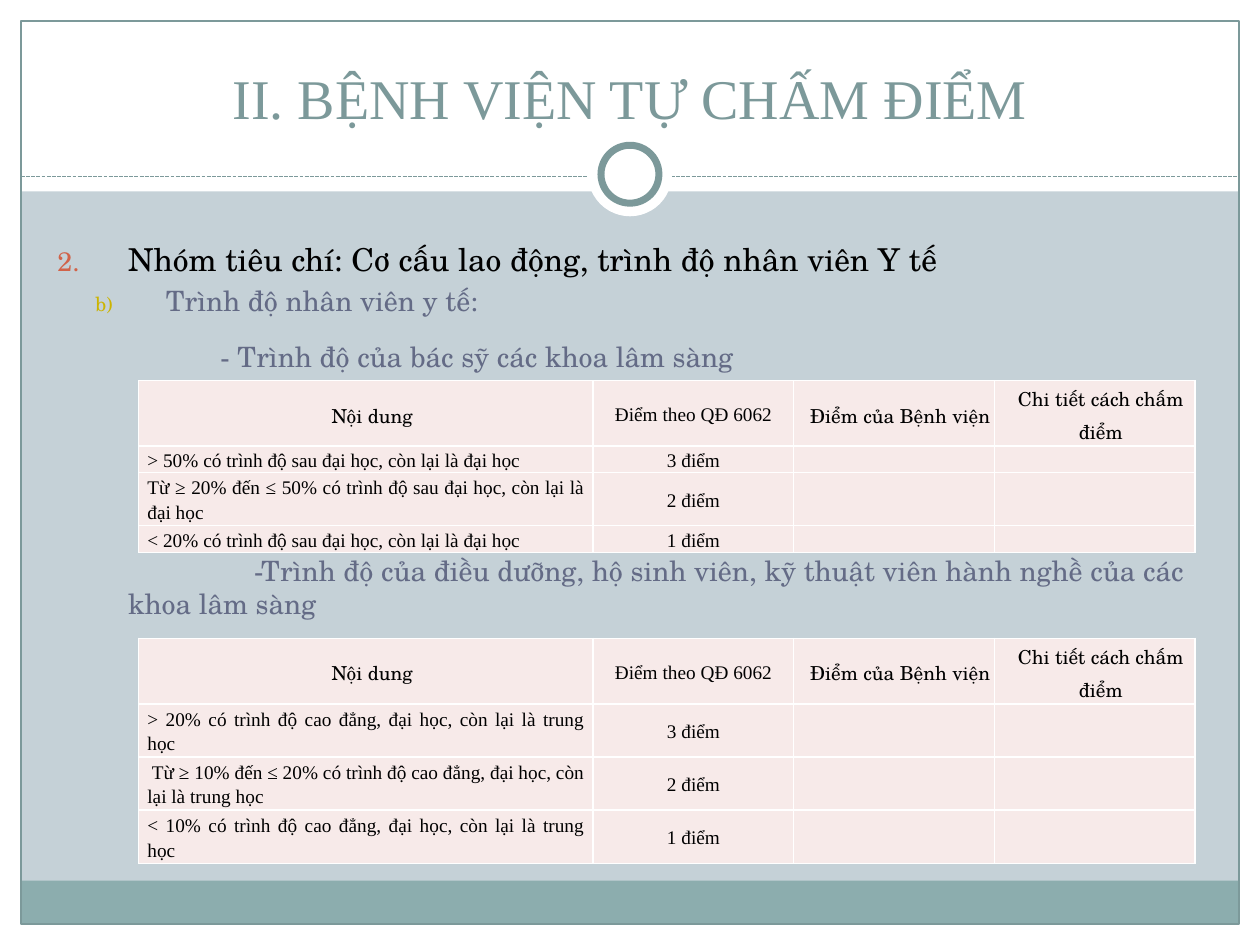
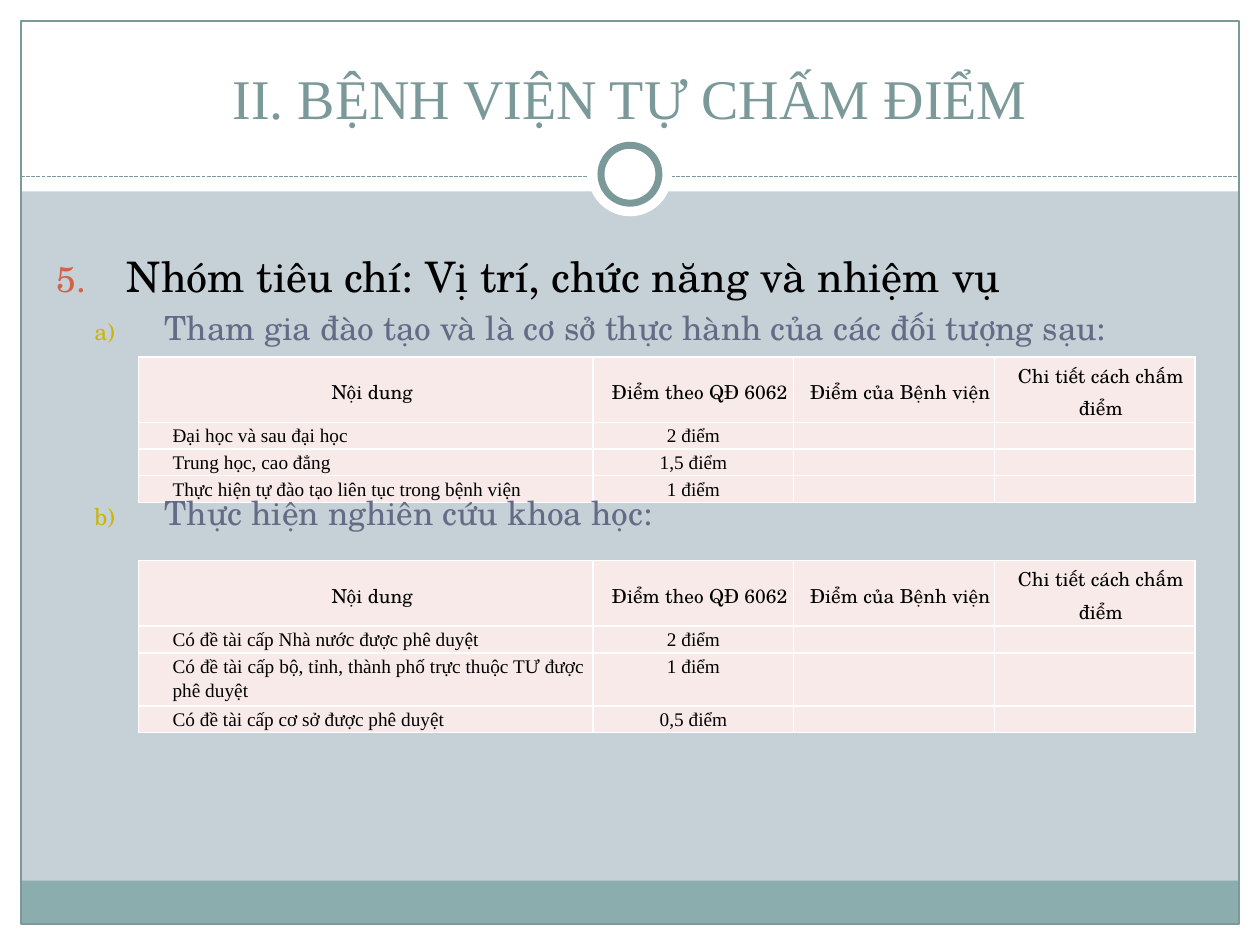
from lxml import etree
from pptx import Presentation
from pptx import util as u
from pptx.dml.color import RGBColor
from pptx.enum import dml, shapes, text
from pptx.oxml import ns

WHITE = RGBColor(0xFF, 0xFF, 0xFF)
BLACK = RGBColor(0x00, 0x00, 0x00)
BACKDROP = RGBColor(0xC5, 0xD1, 0xD7)
BAND = RGBColor(0x8C, 0xAD, 0xAE)
TEAL = RGBColor(0x7C, 0x99, 0x9A)
SLATE = RGBColor(0x64, 0x6B, 0x86)
RED = RGBColor(0xD1, 0x63, 0x49)
GOLD = RGBColor(0xCC, 0xB4, 0x00)
CELL = RGBColor(0xF7, 0xEA, 0xE9)

SERIF = "Times New Roman"
SCHOLA = "TeX Gyre Schola"
PP, SHAPE = text.PP_ALIGN, shapes.MSO_SHAPE
MIDDLE, TOP = text.MSO_ANCHOR.MIDDLE, text.MSO_ANCHOR.TOP

COLS, ROWS = 60, 45
TABLE_LEFT = 6.6
COLUMN_WIDTHS = [21.65] + [9.55] * 3
HEADER_HEIGHT, LINE_HEIGHT = 3.12, 1.14
HEADERS = ["Nội dung", "Điểm theo QĐ 6062", "Điểm của Bệnh viện",
           "Chi tiết cách chấm điểm"]


def add_child(parent, tag, **attributes):
    return etree.SubElement(parent, ns.qn(tag), attributes)


class Deck:
    """Draws on the current slide, in columns and rows of a 60 x 45 grid."""

    def __init__(self):
        self.prs = Presentation()
        self.prs.slide_width, self.prs.slide_height = u.Inches(10), u.Inches(7.5)
        self.s = None

    def x(self, cols):
        return round(self.prs.slide_width * cols / COLS)

    def y(self, rows):
        return round(self.prs.slide_height * rows / ROWS)

    def box(self, left, top, width, height):
        return self.x(left), self.y(top), self.x(width), self.y(height)

    def shape(self, kind, place, fill=None, line=None, weight=0.75):
        sp = self.s.shapes.add_shape(kind, *self.box(*place))
        sp.shadow.inherit = False
        if fill is None:
            sp.fill.background()
        else:
            sp.fill.solid()
            sp.fill.fore_color.rgb = fill
        if line is None:
            sp.line.fill.background()
        else:
            sp.line.color.rgb = line
            sp.line.width = u.Pt(weight)

    def dashed_line(self, left, right, row):
        line = self.s.shapes.add_connector(
            shapes.MSO_CONNECTOR.STRAIGHT,
            self.x(left), self.y(row), self.x(right), self.y(row))
        line.line.color.rgb = TEAL
        line.line.width = u.Pt(0.75)
        line.line.dash_style = dml.MSO_LINE.SQUARE_DOT
        add_child(line.element.spPr, "a:effectLst")

    def slide(self, title):
        """Starts a slide with the shared frame, bands, ring and title."""
        self.s = self.prs.slides.add_slide(self.prs.slide_layouts[6])
        self.s.background.fill.solid()
        self.s.background.fill.fore_color.rgb = BACKDROP
        for edge in [(0, 44, 60, 1), (0, 0, 60, 9.12), (0, 0, 1, 45), (59, 0, 1, 45)]:
            self.shape(SHAPE.RECTANGLE, edge, WHITE)
        self.shape(SHAPE.RECTANGLE, (1, 41.94, 58, 2.06), BAND)
        self.shape(SHAPE.RECTANGLE, (1, 1, 58, 43), line=TEAL)
        self.dashed_line(1, 59, 8.4)
        self.shape(SHAPE.OVAL, (28, 6.3, 4, 4), WHITE)
        self.shape(SHAPE.OVAL, (28.62, 6.92, 2.76, 2.76), WHITE, TEAL, 4)
        tf = self.text_frame(2, 1.5, 56, 5)
        tf.vertical_anchor = text.MSO_ANCHOR.BOTTOM
        p = self.paragraph(tf, title, 32, TEAL, SERIF)
        p.alignment = PP.CENTER

    def text_frame(self, *place):
        tf = self.s.shapes.add_textbox(*self.box(*place)).text_frame
        tf.word_wrap = True
        return tf

    def paragraph(self, tf, words, size, color=BLACK, font=SCHOLA, margin=0, indent=0):
        """Fills the empty first paragraph, or adds one after it."""
        p = tf.paragraphs[0] if not tf.text else tf.add_paragraph()
        p.text = words
        p.font.size, p.font.name, p.font.color.rgb = u.Pt(size), font, color
        pPr = p._p.get_or_add_pPr()
        pPr.set("marL", str(self.x(margin)))
        pPr.set("indent", str(self.x(indent)))
        return p

    def outline(self, tf, words, size, color=SLATE, margin=5.16, indent=0):
        p = self.paragraph(tf, words, size, color, margin=margin, indent=indent)
        p.space_before = u.Pt(size * 0.2)
        return p

    def number(self, p, scheme, start, color, percent):
        pPr = p._p.get_or_add_pPr()
        mark = etree.Element(ns.qn("a:buClr"))
        add_child(mark, "a:srgbClr", val=str(color))
        size = etree.Element(ns.qn("a:buSzPct"), val=str(percent * 1000))
        auto = etree.Element(ns.qn("a:buAutoNum"), type=scheme, startAt=str(start))
        defaults = pPr.find(ns.qn("a:defRPr"))
        for item in (mark, size, auto):
            defaults.addprevious(item)

    def group_heading(self, tf, words, size, start):
        p = self.outline(tf, words, size, BLACK, 3.36, -3.36)
        self.number(p, "arabicPeriod", start, RED, 85)

    def criterion(self, tf, words, size, start):
        p = self.outline(tf, words, size, indent=-3.36)
        self.number(p, "alphaLcParenR", start, GOLD, 70)

    def cell(self, cell, words, align=PP.CENTER, font=SERIF, margin=0,
             side=0.42, before=0, after=0, anchor=MIDDLE):
        cell.margin_left = cell.margin_right = self.x(side)
        cell.margin_top = cell.margin_bottom = 0
        cell.vertical_anchor = anchor
        p = self.paragraph(cell.text_frame, words, 11, font=font, margin=margin)
        p.alignment, p.line_spacing = align, 1.15
        p.space_before, p.space_after = u.Pt(before), u.Pt(after)
        if not words:
            add_child(p._p, "a:endParaRPr", sz="1100")
        tcPr = cell._tc.get_or_add_tcPr()
        for side_tag in ("a:lnL", "a:lnR", "a:lnT", "a:lnB"):
            ln = add_child(tcPr, side_tag, w=str(u.Pt(1)))
            add_child(add_child(ln, "a:solidFill"), "a:srgbClr", val=str(WHITE))
        cell.fill.solid()
        cell.fill.fore_color.rgb = CELL

    def score_table(self, top, criteria, margin=0, anchor=MIDDLE, plain_score=False):
        """criteria: (wording, score, number of lines) for each row."""
        heights = [HEADER_HEIGHT] + [LINE_HEIGHT * lines for *_, lines in criteria]
        frame = self.s.shapes.add_table(
            len(heights), len(HEADERS),
            *self.box(TABLE_LEFT, top, sum(COLUMN_WIDTHS), sum(heights)))
        table = frame.table
        table.first_row = table.horz_banding = False
        for column, width in zip(table.columns, COLUMN_WIDTHS):
            column.width = self.x(width)
        for row, height in zip(table.rows, heights):
            row.height = self.y(height)
        for c, words in enumerate(HEADERS):
            side = 0 if c else 0.42
            if plain_score and c == 1:
                self.cell(table.cell(0, c), words, side=side, before=6)
            else:
                self.cell(table.cell(0, c), words, font=SCHOLA, margin=0.6,
                          side=side, before=6, after=6)
        for r, (words, score, _) in enumerate(criteria, 1):
            self.cell(table.cell(r, 0), words, PP.JUSTIFY, margin=margin, anchor=anchor)
            for c, value in enumerate([score, "", ""], 1):
                self.cell(table.cell(r, c), value, anchor=anchor)


def staff_level_slide(deck):
    deck.slide("II. BỆNH VIỆN TỰ CHẤM ĐIỂM")
    tf = deck.text_frame(2.15, 11.16, 55.8, 6.6)
    deck.group_heading(tf, "Nhóm tiêu chí: Cơ cấu lao động, trình độ nhân viên Y tế", 18, 2)
    deck.criterion(tf, "Trình độ nhân viên y tế:", 16, 2)
    p = deck.outline(tf, "- Trình độ của bác sỹ các khoa lâm sàng", 16, margin=7.76)
    p.line_spacing = 1.5
    deck.score_table(18.12, [
        ("> 50% có trình độ sau đại học, còn lại là đại học", "3 điểm", 1),
        ("Từ ≥ 20% đến ≤ 50% có trình độ sau đại học, còn lại là đại học", "2 điểm", 2),
        ("< 20% có trình độ sau đại học, còn lại là đại học", "1 điểm", 1),
    ], plain_score=True)
    tf = deck.text_frame(2.15, 26.04, 55.8, 4)
    deck.outline(tf, "-Trình độ của điều dưỡng, hộ sinh viên, kỹ thuật viên hành nghề "
                 "của các khoa lâm sàng", 16, margin=3.36, indent=6)
    deck.score_table(30.4, [
        ("> 20% có trình độ cao đẳng, đại học, còn lại là trung học", "3 điểm", 2),
        (" Từ ≥ 10% đến ≤ 20% có trình độ cao đẳng, đại học, còn lại là trung học",
         "2 điểm", 2),
        ("< 10% có trình độ cao đẳng, đại học, còn lại là trung học", "1 điểm", 2),
    ], plain_score=True)


def training_and_research_slide(deck):
    deck.slide("II. BỆNH VIỆN TỰ CHẤM ĐIỂM")
    tf = deck.text_frame(2.1, 11.64, 55.8, 5)
    deck.group_heading(tf, "Nhóm tiêu chí: Vị trí, chức năng và nhiệm vụ", 24, 5)
    deck.criterion(tf, "Tham gia đào tạo và là cơ sở thực hành của các đối tượng sạu:", 19, 1)
    deck.score_table(17, [
        ("Đại học và sau đại học", "2 điểm", 1),
        ("Trung học, cao đẳng", "1,5 điểm", 1),
        ("Thực hiện tự đào tạo liên tục trong bệnh viện", "1 điểm", 1),
    ], margin=1.2, anchor=TOP)
    tf = deck.text_frame(2.1, 23.16, 55.8, 2.6)
    deck.criterion(tf, "Thực hiện nghiên cứu khoa học:", 19, 2)
    deck.score_table(26.7, [
        ("Có đề tài cấp Nhà nước được phê duyệt", "2 điểm", 1),
        ("Có đề tài cấp bộ, tỉnh, thành phố trực thuộc TƯ được phê duyệt", "1 điểm", 2),
        ("Có đề tài cấp cơ sở được phê duyệt", "0,5 điểm", 1),
    ], margin=1.2, anchor=TOP)


def main():
    deck = Deck()
    staff_level_slide(deck)
    training_and_research_slide(deck)
    deck.prs.save("out.pptx")


if __name__ == "__main__":
    main()
